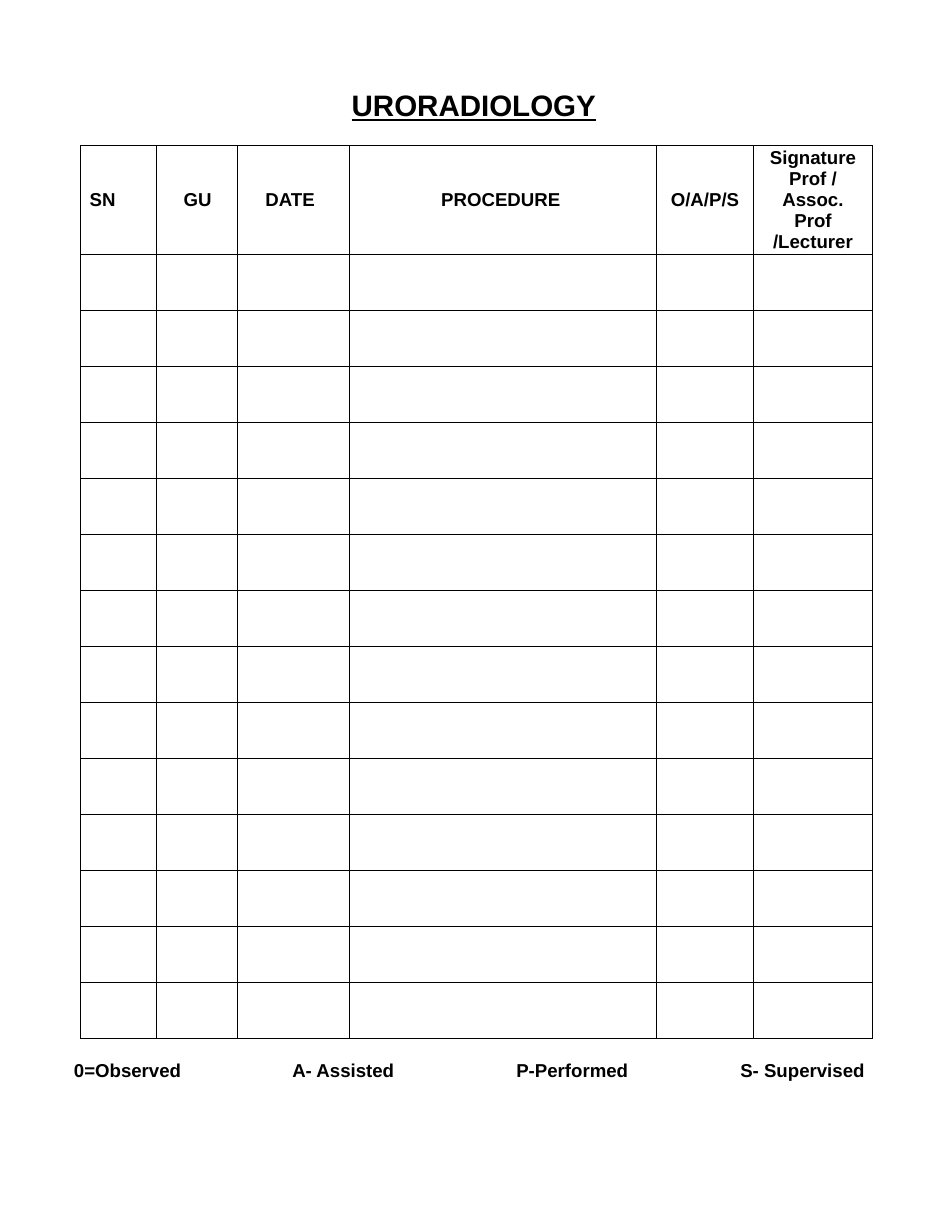
from lxml.etree import SubElement
from pptx import Presentation
from pptx.dml.color import RGBColor
from pptx.enum.text import MSO_ANCHOR, PP_ALIGN
from pptx.oxml.ns import qn
from pptx.util import Inches, Pt

COLORS = {"ink": "000000"}
FONT = "Arial"
GRID = 0.1
TITLE_BOX = (31.4, 7.7, 22.1, 3.4)
LOG_BOX = (7.2, 13, 70.7, 79.7)
LEGEND_BOX = (6.6, 94.4, 70.9, 2.3)
LOG_COLUMNS = [
    ("SN", 6.8, 0.8),
    ("GU", 7.2, 2.4),
    ("DATE", 10, 2.5),
    ("PROCEDURE", 27.4, 8.2),
    ("O/A/P/S", 8.7, 1.3),
    ("Signature\vProf /\vAssoc.\vProf\n/Lecturer", 10.6, 0),
]
ENTRY_ROWS, HEADER_HEIGHT, ENTRY_HEIGHT = 14, 9.7, 5
LEGEND = [
    ("0=Observed", 0, 9.9),
    ("A- Assisted", 19.5, 9.5),
    ("P-Performed", 39.5, 10.3),
    ("S- Supervised", 59.5, 11.4),
]


def cells(count):
    """Turn a number of grid cells into a length."""
    return Inches(round(count * GRID, 2))


def style(paragraph, size):
    """Give a paragraph the bold form lettering."""
    font = paragraph.font
    font.name, font.size, font.bold = FONT, Pt(size), True
    font.color.rgb = RGBColor.from_string(COLORS["ink"])


def add_label(slide, box, wording, size, underline=False):
    """Place one line of text in a box and return nothing."""
    frame = slide.shapes.add_textbox(*map(cells, box)).text_frame
    frame.margin_left = frame.margin_right = frame.margin_bottom = 0
    frame.margin_top = cells(0.1)
    frame.word_wrap = False
    line = frame.paragraphs[0]
    line.text = wording
    line.space_before = Pt(1)
    style(line, size)
    line.font.underline = underline


def rule_cell(cell):
    """Draw thin borders round a cell and leave it unfilled."""
    properties = cell._tc.get_or_add_tcPr()
    for side in ("lnL", "lnR", "lnT", "lnB"):
        border = SubElement(properties, qn(f"a:{side}"), w=str(Pt(0.5)))
        fill = SubElement(border, qn("a:solidFill"))
        SubElement(fill, qn("a:srgbClr"), val=COLORS["ink"])
    cell.fill.background()


def fill_heading(cell, heading, indent):
    """Write a column heading, centred when it has no indent."""
    cell.margin_left = cells(indent)
    cell.margin_right = cell.margin_top = cell.margin_bottom = 0
    cell.vertical_anchor = MSO_ANCHOR.MIDDLE
    cell.text_frame.text = heading
    for line in cell.text_frame.paragraphs:
        style(line, 12)
        line.alignment = PP_ALIGN.LEFT if indent else PP_ALIGN.CENTER
        line.line_spacing = Pt(13.5)


def add_log(slide, box):
    """Build the procedure log with a heading row and blank entries."""
    frame = slide.shapes.add_table(ENTRY_ROWS + 1, len(LOG_COLUMNS), *map(cells, box))
    log = frame.table
    log.first_row = log.horz_banding = False
    for index, row in enumerate(log.rows):
        row.height = cells(ENTRY_HEIGHT if index else HEADER_HEIGHT)
    for index, (heading, width, indent) in enumerate(LOG_COLUMNS):
        log.columns[index].width = cells(width)
        fill_heading(log.cell(0, index), heading, indent)
    for cell in log.iter_cells():
        rule_cell(cell)


def add_legend(slide, box):
    """Set out the code meanings along the foot of the log."""
    left, top, _, height = box
    for meaning, offset, width in LEGEND:
        add_label(slide, (left + offset, top, width, height), meaning, 12)


def main():
    """Build and save the log sheet."""
    deck = Presentation()
    deck.slide_width, deck.slide_height = cells(85), cells(110)
    slide = deck.slides.add_slide(deck.slide_layouts[6])
    add_label(slide, TITLE_BOX, "URORADIOLOGY", 19, underline=True)
    add_log(slide, LOG_BOX)
    add_legend(slide, LEGEND_BOX)
    deck.save("out.pptx")


if __name__ == "__main__":
    main()
